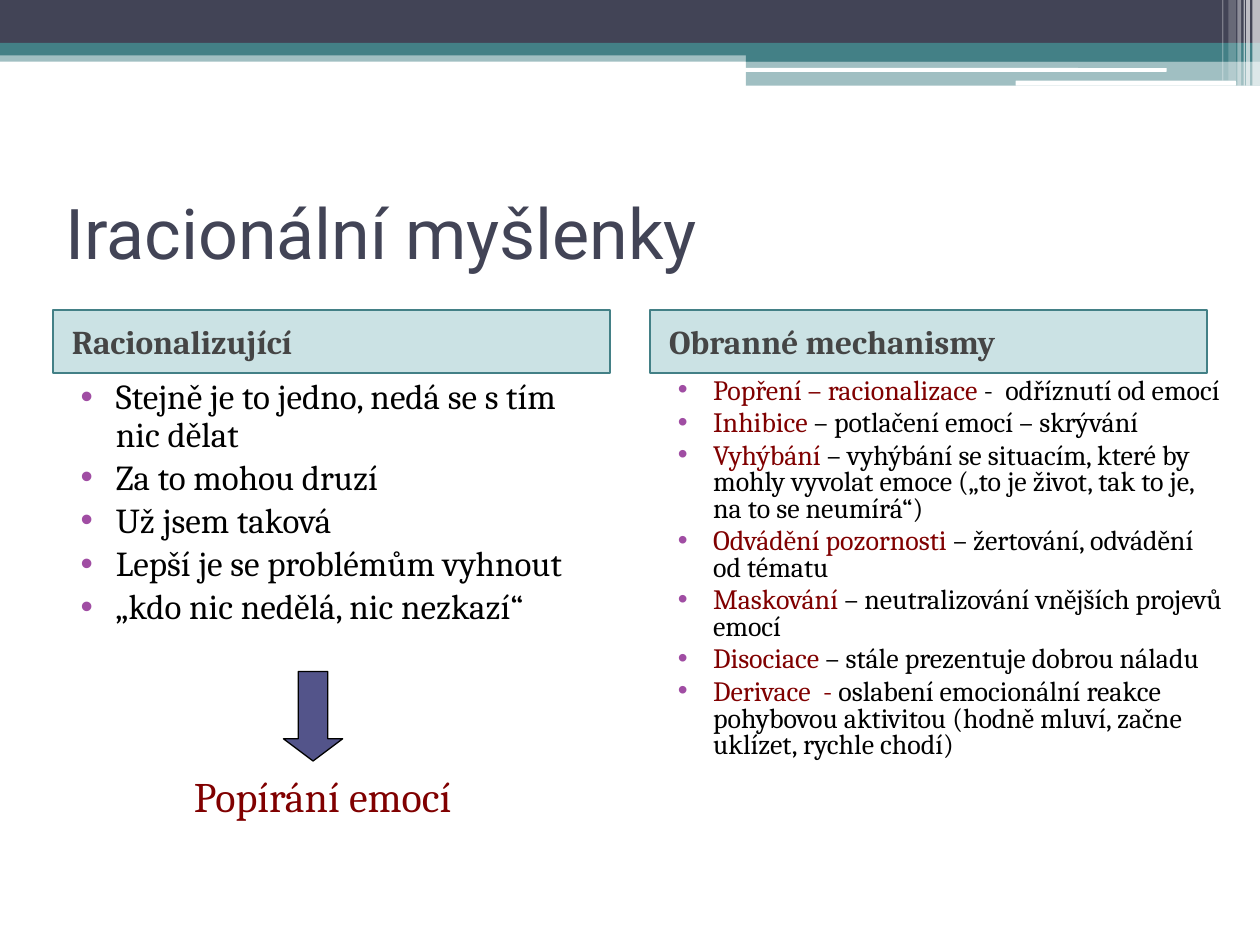
"""Build the slide on irrational thoughts and defence mechanisms."""
from dataclasses import dataclass

from lxml import etree
from pptx import Presentation
from pptx.dml.color import RGBColor
from pptx.enum.shapes import MSO_SHAPE
from pptx.enum.text import MSO_ANCHOR, MSO_AUTO_SIZE, PP_ALIGN
from pptx.oxml.ns import qn
from pptx.util import Inches, Pt

RECT, ROUNDED, DOWN_ARROW = MSO_SHAPE.RECTANGLE, MSO_SHAPE.ROUNDED_RECTANGLE, MSO_SHAPE.DOWN_ARROW
MIDDLE, TOP = MSO_ANCHOR.MIDDLE, MSO_ANCHOR.TOP
LEFT, CENTER = PP_ALIGN.LEFT, PP_ALIGN.CENTER
NO_AUTOFIT = MSO_AUTO_SIZE.NONE
COMPARISON_LAYOUT = 4


@dataclass(frozen=True)
class Theme:
    navy: str = "424456"
    teal: str = "438086"
    header_fill: str = "328E97"
    header_text: str = "454545"
    bullet: str = "A04DA3"
    arrow: str = "53548A"
    accent: str = "800000"
    black: str = "000000"
    white: str = "FFFFFF"
    title_font: str = "Roboto"
    body_font: str = "Cambria"
    title_size: int = 40
    header_size: int = 19
    thoughts_size: int = 20
    defences_size: int = 16
    conclusion_size: int = 24


theme = Theme()


def paint(shape, color, opacity=100):
    shape.fill.solid()
    shape.fill.fore_color.rgb = RGBColor.from_string(color)
    if opacity < 100:
        tint = shape.fill._xPr.find(qn("a:solidFill"))[0]
        etree.SubElement(tint, qn("a:alpha"), val=str(opacity * 1000))


def add_run(paragraph, text, size, color, font=theme.body_font, bold=False):
    run = paragraph.add_run()
    run.text = text
    run.font.size = Pt(size)
    run.font.name = font
    run.font.bold = bold
    run.font.color.rgb = RGBColor.from_string(color)


prs = Presentation()
prs.slide_width, prs.slide_height = Inches(10), Inches(7.5)
slide = prs.slides.add_slide(prs.slide_layouts[COMPARISON_LAYOUT])

bands = [
    (RECT, 0, 0.4, 10, 0.09, theme.teal, 50),
    (RECT, 0, 0, 10, 0.34, theme.navy, 100),
    (RECT, 0, 0.34, 10, 0.1, theme.teal, 100),
    (RECT, 5.92, 0.39, 4.08, 0.1, theme.teal, 100),
    (RECT, 5.92, 0.48, 4.08, 0.2, theme.teal, 50),
    (ROUNDED, 5.91, 0.54, 3.35, 0.03, theme.white, 100),
    (ROUNDED, 8.06, 0.64, 1.75, 0.04, theme.white, 100),
]
stripes = [
    (9.94, 0.06, 0.68, 65),
    (9.89, 0.03, 0.68, 65),
    (9.87, 0.01, 0.68, 60),
    (9.82, 0.03, 0.68, 40),
    (9.75, 0.06, 0.64, 20),
    (9.7, 0.01, 0.64, 30),
]
bands += [(RECT, x, 0, width, height, theme.white, opacity) for x, width, height, opacity in stripes]
for kind, x, y, width, height, color, opacity in bands:
    band = slide.shapes.add_shape(kind, Inches(x), Inches(y), Inches(width), Inches(height))
    band.shadow.inherit = False
    band.line.fill.background()
    paint(band, color, opacity)

title = slide.shapes.title
title.left, title.top, title.width, title.height = Inches(0.42), Inches(1.25), Inches(9.17), Inches(1.17)
title.text_frame.vertical_anchor = MIDDLE
title.text_frame.auto_size = NO_AUTOFIT
heading = title.text_frame.paragraphs[0]
heading.alignment = LEFT
add_run(heading, "Iracionální myšlenky", theme.title_size, theme.navy, theme.title_font)

thoughts = [
    ("", "Stejně je to jedno, nedá se s tím nic dělat"),
    ("", "Za to mohou druzí"),
    ("", "Už jsem taková"),
    ("", "Lepší je se problémům vyhnout"),
    ("", "„kdo nic nedělá, nic nezkazí“"),
]
defences = [
    ("Popření – racionalizace", " -  odříznutí od emocí"),
    ("Inhibice ", "– potlačení emocí – skrývání"),
    ("Vyhýbání", " – vyhýbání se situacím, které by mohly vyvolat emoce („to je život, tak to je, na to se neumírá“)"),
    ("Odvádění pozornosti", " – žertování, odvádění od tématu"),
    ("Maskování", " – neutralizování vnějších projevů emocí"),
    ("Disociace", " – stále prezentuje dobrou náladu"),
    ("Derivace  - ", "oslabení emocionální reakce pohybovou aktivitou (hodně mluví, začne uklízet, rychle chodí)"),
]
columns = [
    (1, 0.42, "Racionalizující", thoughts, 4.42, 4.25, theme.thoughts_size, 0.9),
    (3, 5.16, "Obranné mechanismy", defences, 4.67, 4.54, theme.defences_size, 0.8),
]
for index, x, label, points, width, height, size, spacing in columns:
    header = slide.placeholders[index]
    header.left, header.top, header.width, header.height = Inches(x), Inches(2.46), Inches(4.42), Inches(0.5)
    paint(header, theme.header_fill, 25)
    header.line.color.rgb = RGBColor.from_string(theme.teal)
    header.line.width = Pt(1)
    header.text_frame.vertical_anchor = MIDDLE
    header.text_frame.auto_size = NO_AUTOFIT
    caption = header.text_frame.paragraphs[0]
    caption.space_before = Pt(0)
    caption._p.get_or_add_pPr().set("marL", str(Inches(0.05)))
    add_run(caption, label, theme.header_size, theme.header_text, bold=True)

    body = slide.placeholders[index + 1]
    body.left, body.top, body.width, body.height = Inches(x), Inches(2.96), Inches(width), Inches(height)
    frame = body.text_frame
    frame.vertical_anchor = TOP
    frame.auto_size = NO_AUTOFIT
    for number, (term, explanation) in enumerate(points):
        point = frame.add_paragraph() if number else frame.paragraphs[0]
        props = point._p.get_or_add_pPr()
        props.set("marL", str(Inches(0.4)))
        props.set("indent", str(Inches(-0.28)))
        bullet_color = etree.SubElement(props, qn("a:buClr"))
        etree.SubElement(bullet_color, qn("a:srgbClr"), val=theme.bullet)
        etree.SubElement(props, qn("a:buChar"), char="•")
        point.line_spacing = spacing
        point.space_before = Pt(3 if number else 0)
        if term:
            add_run(point, term, size, theme.accent)
        add_run(point, explanation, size, theme.black)

arrow = slide.shapes.add_shape(DOWN_ARROW, Inches(2.25), Inches(5.33), Inches(0.47), Inches(0.71))
arrow.adjustments[0], arrow.adjustments[1] = 0.5, 0.375
arrow.shadow.inherit = False
paint(arrow, theme.arrow)
arrow.line.color.rgb = RGBColor.from_string(theme.black)
arrow.line.width = Pt(0.75)

conclusion = slide.shapes.add_textbox(Inches(1.33), Inches(6.07), Inches(2.46), Inches(0.5))
conclusion.text_frame.word_wrap = False
result = conclusion.text_frame.paragraphs[0]
result.alignment = CENTER
add_run(result, "Popírání emocí", theme.conclusion_size, theme.accent)

prs.save("out.pptx")
